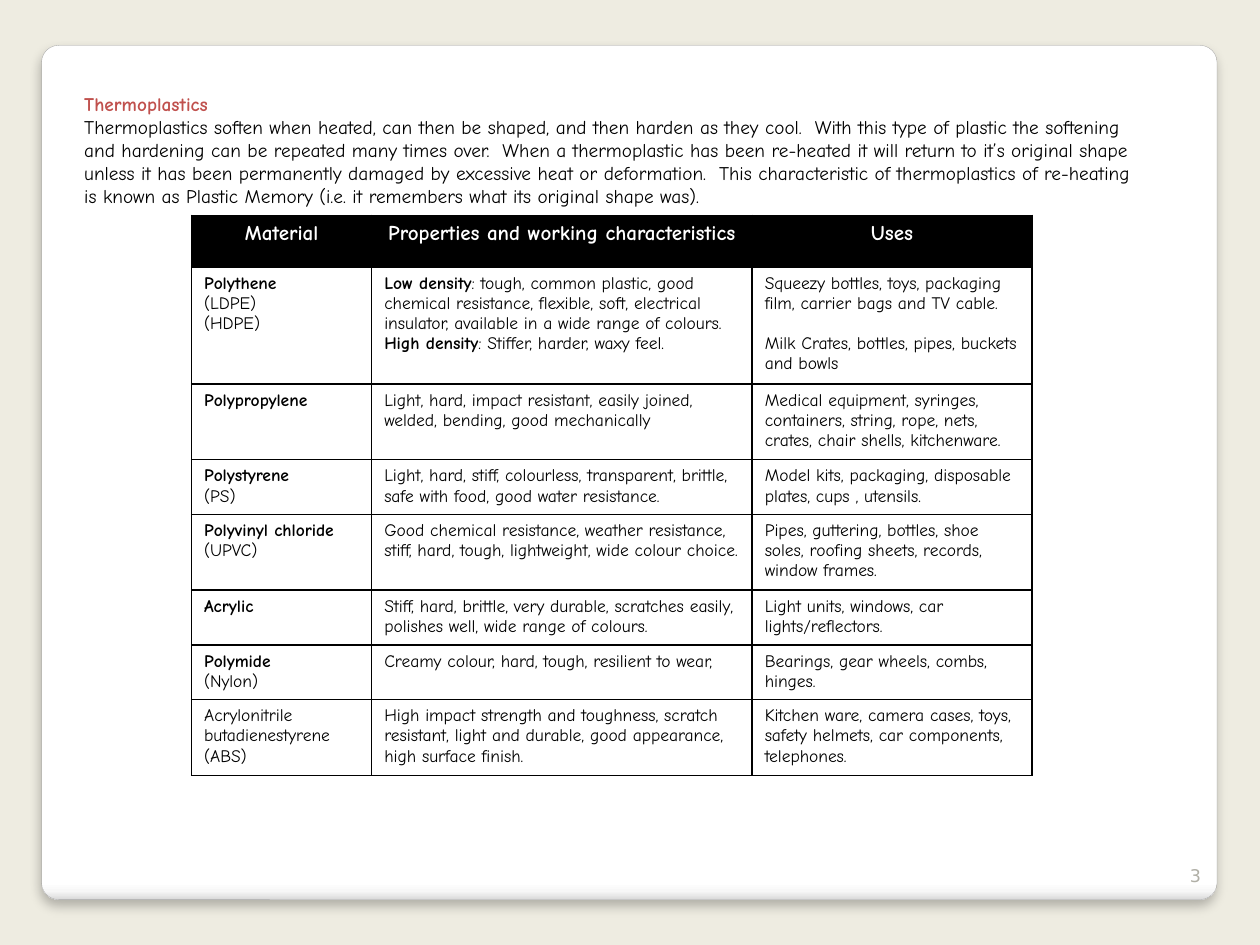
from dataclasses import dataclass
from lxml.etree import SubElement
from pptx import Presentation
from pptx.dml.color import RGBColor
from pptx.enum.shapes import MSO_SHAPE
from pptx.enum.text import MSO_ANCHOR, PP_ALIGN
from pptx.oxml.ns import qn
from pptx.util import Inches, Pt


@dataclass(frozen=True)
class Theme:
    background: str = "EEECE1"
    panel_line: str = "A4A4A4"
    panel_stops: tuple = ((0, "FFFFFF"), (98, "FFFFFF"), (99, "F7F7F7"), (100, "DADADA"))
    black: str = "000000"
    white: str = "FFFFFF"
    accent: str = "C0504D"
    muted: str = "B0AFA6"
    font: str = "Comic Neue"
    number_font: str = "DejaVu Sans"
    small: float = 10
    body: float = 11
    header: float = 12


THEME = Theme()

INTRODUCTION = (
    "Thermoplastics soften when heated, can then be shaped, and then harden as they cool.  "
    "With this type of plastic the softening and hardening can be repeated many times over.  "
    "When a thermoplastic has been re-heated it will return to it’s original shape unless it has been "
    "permanently damaged by excessive heat or deformation.  This characteristic of thermoplastics of "
    "re-heating is known as Plastic Memory (i.e. it remembers what its original shape was)."
)

HEADERS = ("Material", "Properties and working characteristics", "Uses")
MATERIALS = (
    ("*Polythene*\n(LDPE)\n(HDPE)",
     "*Low density*: tough, common plastic, good chemical resistance, flexible, soft, electrical "
     "insulator, available in a wide range of colours.\n*High density*: Stiffer, harder, waxy feel.",
     "Squeezy bottles, toys, packaging film, carrier bags and TV cable.\n"
     "Milk Crates, bottles, pipes, buckets and bowls"),
    ("*Polypropylene*",
     "Light, hard, impact resistant, easily joined, welded, bending, good mechanically",
     "Medical equipment, syringes, containers, string, rope, nets, crates, chair shells, kitchenware."),
    ("*Polystyrene*\n(PS)",
     "Light, hard, stiff, colourless, transparent, brittle, safe with food, good water resistance.",
     "Model kits, packaging, disposable plates, cups , utensils."),
    ("*Polyvinyl chloride*\n(UPVC)",
     "Good chemical resistance, weather resistance, stiff, hard, tough, lightweight, wide colour choice.",
     "Pipes, guttering, bottles, shoe soles, roofing sheets, records, window frames."),
    ("*Acrylic*",
     "Stiff, hard, brittle, very durable, scratches easily, polishes well, wide range of colours.",
     "Light units, windows, car lights/reflectors."),
    ("*Polymide*\n(Nylon)",
     "Creamy colour, hard, tough, resilient to wear,",
     "Bearings, gear wheels, combs, hinges."),
    ("Acrylonitrile butadienestyrene\n(ABS)",
     "High impact strength and toughness, scratch resistant, light and durable, good appearance, "
     "high surface finish.",
     "Kitchen ware, camera cases, toys, safety helmets, car components, telephones."),
)


def write_text(paragraph, text, size=THEME.small, color=THEME.black, font=THEME.font, align=PP_ALIGN.LEFT):
    paragraph.alignment = align
    for index, part in enumerate(text.split("*")):
        if part:
            run = paragraph.add_run()
            run.text = part
            run.font.name = font
            run.font.size = Pt(size)
            run.font.bold = index % 2 == 1
            run.font.color.rgb = RGBColor.from_string(color)


class SlideBuilder:
    """Draws styled elements on the current slide."""

    def __init__(self, slide, theme):
        self.slide = slide
        self.theme = theme

    def background(self):
        fill = self.slide.background.fill
        fill.solid()
        fill.fore_color.rgb = RGBColor.from_string(self.theme.background)

    def panel(self, left, top, width, height):
        shape = self.slide.shapes.add_shape(
            MSO_SHAPE.ROUNDED_RECTANGLE, Inches(left), Inches(top), Inches(width), Inches(height))
        shape.adjustments[0] = 0.02
        shape.shadow.inherit = False
        shape.line.color.rgb = RGBColor.from_string(self.theme.panel_line)
        shape.line.width = Pt(0.16)
        shape.fill.gradient()
        shape.fill.gradient_angle = 270
        properties = shape.element.spPr
        stops = properties.find(qn("a:gradFill")).find(qn("a:gsLst"))
        for stop in list(stops):
            stops.remove(stop)
        for position, color in self.theme.panel_stops:
            stop = SubElement(stops, qn("a:gs"), pos=str(position * 1000))
            SubElement(stop, qn("a:srgbClr"), val=color)
        shadow = SubElement(
            properties.find(qn("a:effectLst")), qn("a:outerShdw"), blurRad=str(Pt(6)),
            dist=str(Pt(4)), dir="5400000", algn="t", rotWithShape="0")
        color = SubElement(shadow, qn("a:srgbClr"), val=self.theme.black)
        SubElement(color, qn("a:alpha"), val="25000")

    def text_box(self, left, top, width, height, anchor=MSO_ANCHOR.TOP):
        frame = self.slide.shapes.add_textbox(
            Inches(left), Inches(top), Inches(width), Inches(height)).text_frame
        frame.word_wrap = True
        frame.vertical_anchor = anchor
        return frame

    def style_cell(self, cell, fill):
        properties = cell._tc.get_or_add_tcPr()
        for side in ("lnL", "lnR", "lnT", "lnB"):
            border = SubElement(properties, qn(f"a:{side}"), w=str(Pt(1)))
            SubElement(SubElement(border, qn("a:solidFill")), qn("a:srgbClr"), val=self.theme.black)
        cell.fill.solid()
        cell.fill.fore_color.rgb = RGBColor.from_string(fill)

    def table(self, left, top, widths, row_height, headers, rows):
        count = len(rows) + 1
        table = self.slide.shapes.add_table(
            count, len(widths), Inches(left), Inches(top),
            Inches(sum(widths)), Inches(row_height * count)).table
        for column, width in zip(table.columns, widths):
            column.width = Inches(width)
        for cell, header in zip(table.rows[0].cells, headers):
            self.style_cell(cell, self.theme.black)
            write_text(cell.text_frame.paragraphs[0], f"*{header}*", size=self.theme.header,
                       color=self.theme.white, align=PP_ALIGN.CENTER)
        for row_index, row in enumerate(rows, start=1):
            for column_index, text in enumerate(row):
                cell = table.cell(row_index, column_index)
                self.style_cell(cell, self.theme.white)
                frame = cell.text_frame
                for index, line in enumerate(text.split("\n")):
                    write_text(frame.add_paragraph() if index else frame.paragraphs[0], line)
        return table


def main():
    presentation = Presentation()
    presentation.slide_width, presentation.slide_height = Inches(10), Inches(7.5)
    slide = presentation.slides.add_slide(presentation.slide_layouts[6])
    builder = SlideBuilder(slide, THEME)
    builder.background()
    builder.panel(0.33, 0.36, 9.33, 6.78)

    number = builder.text_box(9.13, 6.68, 0.5, 0.4, anchor=MSO_ANCHOR.BOTTOM)
    write_text(number.paragraphs[0], "3", color=THEME.muted, font=THEME.number_font, align=PP_ALIGN.RIGHT)

    introduction = builder.text_box(0.57, 0.68, 8.58, 1.03)
    write_text(introduction.paragraphs[0], "*Thermoplastics*", size=THEME.body, color=THEME.accent)
    write_text(introduction.add_paragraph(), INTRODUCTION, size=THEME.body)

    table = builder.table(1.52, 1.71, (1.43, 3.02, 2.22), 0.41, HEADERS, MATERIALS)
    table.cell(1, 2).text_frame.paragraphs[0].space_after = Pt(11.5)
    presentation.save("out.pptx")


if __name__ == "__main__":
    main()
